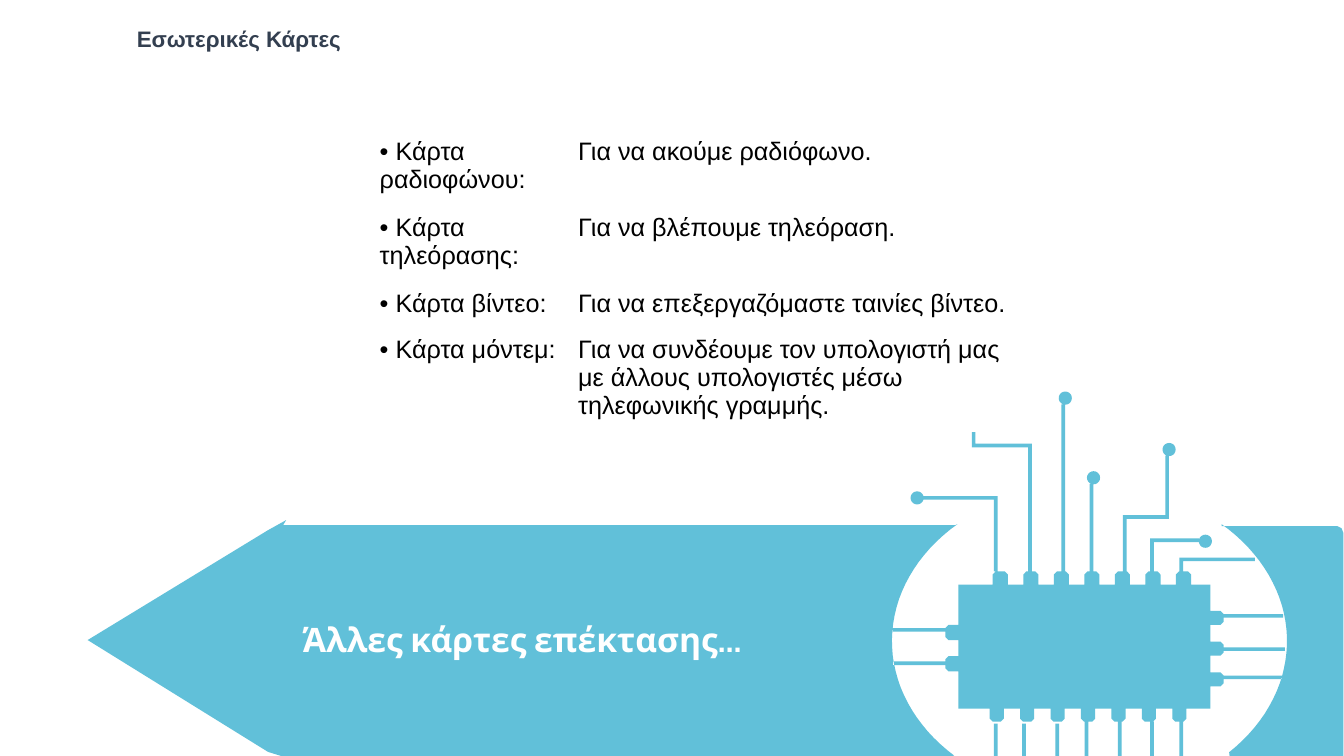
import math

import pptx
import pptx.dml.color
import pptx.enum.text
import pptx.oxml
import pptx.oxml.ns
import pptx.util
from pptx.util import Cm, Pt

THEME = {
    "blue": "1EA6C9", "blue_alpha": 70, "white": "FFFFFF",
    "slate": "333F50", "black": "000000",
    "body_font": "Arial", "banner_font": "Cabin",
    "title_size": 16, "table_size": 18, "banner_size": 24,
}

TITLE = "Εσωτερικές Κάρτες"
BANNER = "Άλλες κάρτες επέκτασης…"
CARDS = [
    ("• Κάρτα ραδιοφώνου:", "Για να ακούμε ραδιόφωνο."),
    ("• Κάρτα τηλεόρασης:", "Για να βλέπουμε τηλεόραση."),
    ("• Κάρτα βίντεο:", "Για να επεξεργαζόμαστε ταινίες βίντεο."),
    ("• Κάρτα μόντεμ:", "Για να συνδέουμε τον υπολογιστή μας με άλλους "
                        "υπολογιστές μέσω τηλεφωνικής γραμμής."),
]
COLUMN_WIDTHS = (5, 11.68)
ROW_HEIGHTS = (1.91, 1.91, 1.16, 2.68)

# Circuit artwork, in hundredths of an inch
UNIT = Cm(2.54) / 100
STEPS = 10  # drawing grid steps in one unit
BOTTOM = 750
RING = {"cx": 1081, "cy": 636, "rx": 196, "ry": 156}
ARROW = [(944, BOTTOM), (279, BOTTOM), (266, 746), (87, 635), (266, 526), (284, 516),
         (281, 521), (948, 521)]
RIGHT_BLOCK = [(1212, 522), (1327, 522), (1331, 524), (1333, 529), (1333, BOTTOM),
               (1220, BOTTOM)]
CHIP = (951, 580, 1201, 703)
PIN_DEPTH = 13
PINS = {  # side: (first start, pitch, width, count)
    "top": (985, 30.3, 15, 7), "right": (606, 30.5, 14, 3),
    "bottom": (982, 30.2, 14, 7), "left": (620, 31, 15, 2),
}
NODE_RADIUS = 6.5
NODES = [(910, 494), (1057, 395), (1085, 474), (1160, 446), (1196, 537)]
TRACES = [
    [(916.5, 494), (988, 494), (988, 567)],
    [(966, 428), (966, 442), (1022, 442), (1022, 567)],
    [(1055, 401.2), (1055, 567)],
    [(1083, 480.2), (1083, 567)],
    [(1158, 452.2), (1158, 513), (1116, 513), (1116, 567)],
    [(1189.5, 536), (1143, 536), (1143, 567)],
    [(1245, 555), (1172, 555), (1172, 567)],
    [(886, 625), (938, 625)], [(886, 658), (938, 658)],
    [(1214, 611), (1273, 611)], [(1214, 644), (1275, 644)],
    [(1214, 672), (1272, 672)],
]
BOTTOM_TRACES = {988: 718, 1016: 718, 1049: 718, 1078: 716, 1111: 716,
                 1143: 716, 1172: 716}
TRACE_WIDTH = 3.6


def rgb(name):
    return pptx.dml.color.RGBColor.from_string(THEME[name])


def ellipse_arc(cx, cy, rx, ry, start, end, count=32):
    """Points between two angles in degrees, clockwise on screen."""
    angles = [math.radians(start + (end - start) * i / count) for i in range(count + 1)]
    return [(cx + rx * math.cos(a), cy + ry * math.sin(a)) for a in angles]


def direction(a, b):
    length = math.dist(a, b)
    return (b[0] - a[0]) / length, (b[1] - a[1]) / length


def thicken(route):
    """Outline of a right-angled route of constant width."""
    dirs = [direction(a, b) for a, b in zip(route, route[1:])]
    sides = ([], [])
    for i, (x, y) in enumerate(route):
        near = dirs[max(i - 1, 0):i + 1]
        nx, ny = -sum(d[1] for d in near), sum(d[0] for d in near)
        for side, sign in zip(sides, (1, -1)):
            side.append((x + sign * nx * TRACE_WIDTH / 2, y + sign * ny * TRACE_WIDTH / 2))
    return sides[0] + sides[1][::-1]


def chip_outline():
    left, top, right, bottom = CHIP
    place = {
        "top": lambda along, out: (along, top - out),
        "right": lambda along, out: (right + out, along),
        "bottom": lambda along, out: (along, bottom + out),
        "left": lambda along, out: (left - out, along),
    }
    corners = {"top": (left, top), "right": (right, top),
               "bottom": (right, bottom), "left": (left, bottom)}
    points = []
    for side, (first, pitch, width, count) in PINS.items():
        edge = []
        for i in range(count):
            a = first + pitch * i
            b = a + width
            profile = [(a, 0), (a, PIN_DEPTH - 3), (a + 3, PIN_DEPTH),
                       (b - 3, PIN_DEPTH), (b, PIN_DEPTH - 3), (b, 0)]
            edge += [place[side](*p) for p in profile]
        points += [corners[side]] + (edge if side in ("top", "right") else edge[::-1])
    return points


def circuit_outlines():
    discs = [ellipse_arc(*node, NODE_RADIUS, NODE_RADIUS, 0, 342, 19) for node in NODES]
    routes = TRACES + [[(x, y), (x, BOTTOM)] for x, y in BOTTOM_TRACES.items()]
    return [ARROW + ellipse_arc(**RING, start=228, end=133.2),
            RIGHT_BLOCK + ellipse_arc(**RING, start=45, end=-48),
            chip_outline(), *discs, *map(thicken, routes)]


def add_circuit(s):
    grid = [[(x * STEPS, y * STEPS) for x, y in o] for o in circuit_outlines()]
    builder = s.shapes.build_freeform(*grid[0][0], scale=UNIT / STEPS)
    for i, outline in enumerate(grid):
        if i:
            builder.move_to(*outline[0])
        builder.add_line_segments(outline[1:], close=True)
    sp = builder.convert_to_shape()
    sp.shadow.inherit = False
    sp.line.fill.background()
    sp.fill.solid()
    sp.fill.fore_color.rgb = rgb("blue")
    color = sp.fill._xPr.find(".//" + pptx.oxml.ns.qn("a:srgbClr"))
    alpha = pptx.oxml.parse_xml("<a:alpha %s val=\"%d\"/>" % (
        pptx.oxml.ns.nsdecls("a"), THEME["blue_alpha"] * 1000))
    color.append(alpha)


def style(p, font, size, color, bold=False):
    p.font.name = THEME[font]
    p.font.size = Pt(THEME[size])
    p.font.color.rgb = rgb(color)
    p.font.bold = bold


def add_text(s, text, box, anchor, *look):
    tf = s.shapes.add_textbox(*map(Cm, box)).text_frame
    tf.word_wrap = True
    tf.auto_size = pptx.enum.text.MSO_AUTO_SIZE.SHAPE_TO_FIT_TEXT
    tf.vertical_anchor = anchor
    tf.text = text
    style(tf.paragraphs[0], *look, bold=True)


def add_cards(s):
    table = s.shapes.add_table(len(CARDS), 2, Cm(9.32), Cm(3.22), Cm(sum(COLUMN_WIDTHS)),
                               Cm(sum(ROW_HEIGHTS))).table
    table.first_row = table.horz_banding = False
    for column, width in zip(table.columns, COLUMN_WIDTHS):
        column.width = Cm(width)
    for row, height, texts in zip(table.rows, ROW_HEIGHTS, CARDS):
        row.height = Cm(height)
        for cell, text in zip(row.cells, texts):
            cell.fill.solid()
            cell.fill.fore_color.rgb = rgb("white")
            cell.margin_left = cell.margin_right = cell.margin_top = Cm(0.25)
            cell.margin_bottom = Cm(0.13)
            cell.text = text
            style(cell.text_frame.paragraphs[0], "body_font", "table_size", "black")


def main():
    prs = pptx.Presentation()
    prs.slide_width, prs.slide_height = Cm(33.87), Cm(19.05)
    s = prs.slides.add_slide(prs.slide_layouts[6])
    anchors = pptx.enum.text.MSO_ANCHOR
    add_circuit(s)
    add_text(s, BANNER, (7.37, 15.47, 15.27, 1.27), anchors.MIDDLE,
             "banner_font", "banner_size", "white")
    add_text(s, TITLE, (3.2, 0.51, 14.83, 0.94), anchors.TOP,
             "body_font", "title_size", "slate")
    add_cards(s)
    prs.save("out.pptx")


if __name__ == "__main__":
    main()
